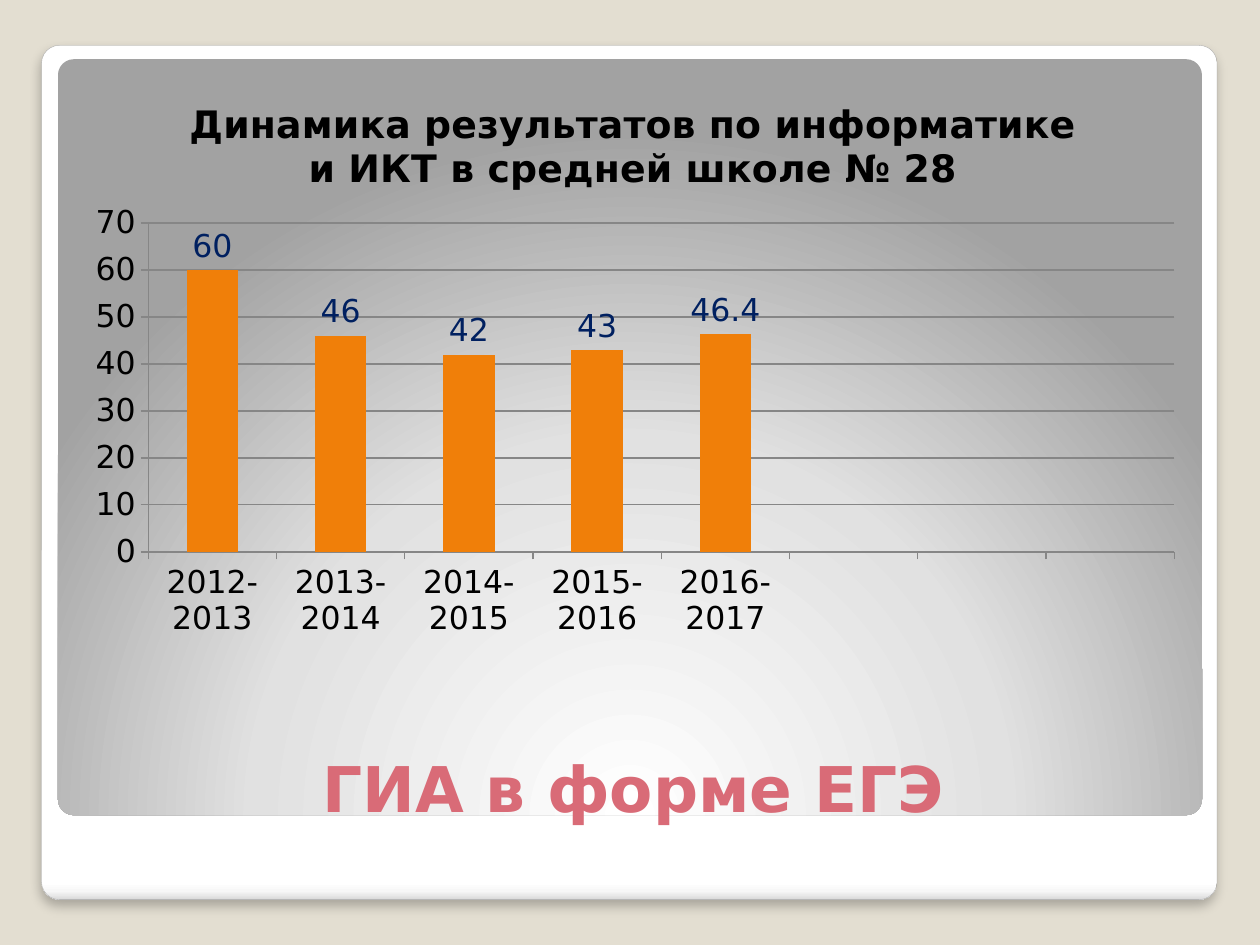
from lxml import etree
from pptx import Presentation
from pptx.chart.data import CategoryChartData as ChartData
from pptx.dml.color import RGBColor as Rgb
from pptx.enum.chart import XL_CHART_TYPE as Kind, XL_LABEL_POSITION as Spot
from pptx.enum.chart import XL_TICK_MARK as Tick
from pptx.enum.shapes import MSO_SHAPE as Form
from pptx.enum.text import MSO_ANCHOR as Anchor, PP_ALIGN as Align
from pptx.oxml import parse_xml
from pptx.oxml.ns import nsdecls, qn
from pptx.util import Inches, Pt

WIDE, HIGH = 10, 7.5
FACE = "DejaVu Sans"
HUES = {
    "back": "E3DED1", "edge": "A4A4A4", "grid": "868686", "text": "000000",
    "title": "D96B77", "bar": "F07F09", "label": "002060",
}
CARD = [(0, "FFFFFF"), (98, "FFFFFF"), (99, "F7F7F7"), (100, "DADADA")]
GLOW = [(0, "FFFFFF"), (55, "E1E1E1"), (100, "A2A2A2")]
DOWN = '<a:lin ang="5400000" scaled="0"/>'
ROUND = ('<a:path path="circle"><a:fillToRect l="50000" t="175000" '
         'r="50000" b="-75000"/></a:path>')
SHADE = ('<a:effectLst {}><a:outerShdw blurRad="76200" dist="50800" '
         'dir="5400000" algn="t" rotWithShape="0"><a:srgbClr val="000000">'
         '<a:alpha val="25000"/></a:srgbClr></a:outerShdw></a:effectLst>')
YEARS = ["2012-2013", "2013-2014", "2014-2015", "2015-2016", "2016-2017"]
MARKS = [60, 46, 42, 43, 46.4]
SLOTS = 8


def hue(name):
    return Rgb.from_string(HUES[name])


def style(font, size, name, bold=False):
    font.name, font.size, font.bold = FACE, Pt(size), bold
    font.color.rgb = hue(name)


def panel(slide, box, stops, flow):
    shape = slide.shapes.add_shape(Form.ROUNDED_RECTANGLE, *map(Inches, box))
    shape.adjustments[0] = 0.021
    shape.shadow.inherit = False
    shape.line.fill.background()
    steps = "".join(f'<a:gs pos="{pos * 1000}"><a:srgbClr val="{tint}"/></a:gs>'
                    for pos, tint in stops)
    props = shape._element.spPr
    props.find(qn("a:prstGeom")).addnext(parse_xml(
        f'<a:gradFill {nsdecls("a")} rotWithShape="1">'
        f'<a:gsLst>{steps}</a:gsLst>{flow}</a:gradFill>'))
    return shape


def frame(slide, box):
    left, top, wide, high = box
    card = panel(slide, box, CARD, DOWN)
    card.line.color.rgb = hue("edge")
    card.line.width = Pt(0.16)
    props = card._element.spPr
    props.replace(props.find(qn("a:effectLst")),
                  parse_xml(SHADE.format(nsdecls("a"))))
    panel(slide, (left + 0.13, top + 0.11, wide - 0.25, high - 0.78), GLOW, ROUND)


def heading(slide, box):
    title = slide.shapes.title
    slide.shapes._spTree.append(title._element)
    title.left, title.top, title.width, title.height = map(Inches, box)
    title.text_frame.text = "ГИА в форме ЕГЭ"
    title.text_frame.vertical_anchor = Anchor.BOTTOM
    para = title.text_frame.paragraphs[0]
    para.alignment = Align.CENTER
    style(para.font, 36, "title", True)


def place(chart, left, top, wide, high):
    area = chart._chartSpace.chart.plotArea
    for old in area.findall(qn("c:layout")):
        area.remove(old)
    layout = etree.Element(qn("c:layout"))
    spot = etree.SubElement(layout, qn("c:manualLayout"))
    rules = [("layoutTarget", "inner"), ("xMode", "edge"), ("yMode", "edge"),
             ("x", left), ("y", top), ("w", wide), ("h", high)]
    for tag, val in rules:
        etree.SubElement(spot, qn(f"c:{tag}")).set("val", str(val))
    area.insert(0, layout)


def graph(slide, box):
    data = ChartData()
    blank = SLOTS - len(YEARS)
    data.categories = YEARS + [""] * blank
    data.add_series("Series 1", MARKS + [None] * blank)
    chart = slide.shapes.add_chart(
        Kind.COLUMN_CLUSTERED, *map(Inches, box), data).chart
    style(chart.font, 18, "text")
    chart.has_legend = False
    chart.has_title = True
    text = chart.chart_title.text_frame
    text.text = "Динамика результатов по информатике и ИКТ в средней школе № 28"
    style(text.paragraphs[0].font, 21.6, "text", True)
    chart.chart_title.include_in_layout = False
    place(chart, 0.07, 0.26, 0.91, 0.57)

    for axis in (chart.category_axis, chart.value_axis):
        axis.major_tick_mark = Tick.OUTSIDE
        axis.minor_tick_mark = Tick.NONE
        axis.format.line.color.rgb = hue("grid")
    scale = chart.value_axis
    scale.minimum_scale, scale.maximum_scale, scale.major_unit = 0, 70, 10
    scale.major_gridlines.format.line.color.rgb = hue("grid")

    plot = chart.plots[0]
    plot.gap_width = 150
    plot.vary_by_categories = False
    bars = plot.series[0]
    bars.format.fill.solid()
    bars.format.fill.fore_color.rgb = hue("bar")
    tags = bars.data_labels
    tags.show_value = True
    tags.position = Spot.OUTSIDE_END
    style(tags.font, 18, "label")


def main():
    deck = Presentation()
    deck.slide_width, deck.slide_height = Inches(WIDE), Inches(HIGH)
    slide = deck.slides.add_slide(deck.slide_layouts[5])
    slide.background.fill.solid()
    slide.background.fill.fore_color.rgb = hue("back")
    left, wide = 0.055 * WIDE, 0.895 * WIDE
    frame(slide, (0.33, 0.36, 9.33, 6.78))
    heading(slide, (left, 5.45, wide, 1.15))
    graph(slide, (left, 0.58, wide, 4.58))
    deck.save("out.pptx")


if __name__ == "__main__":
    main()
